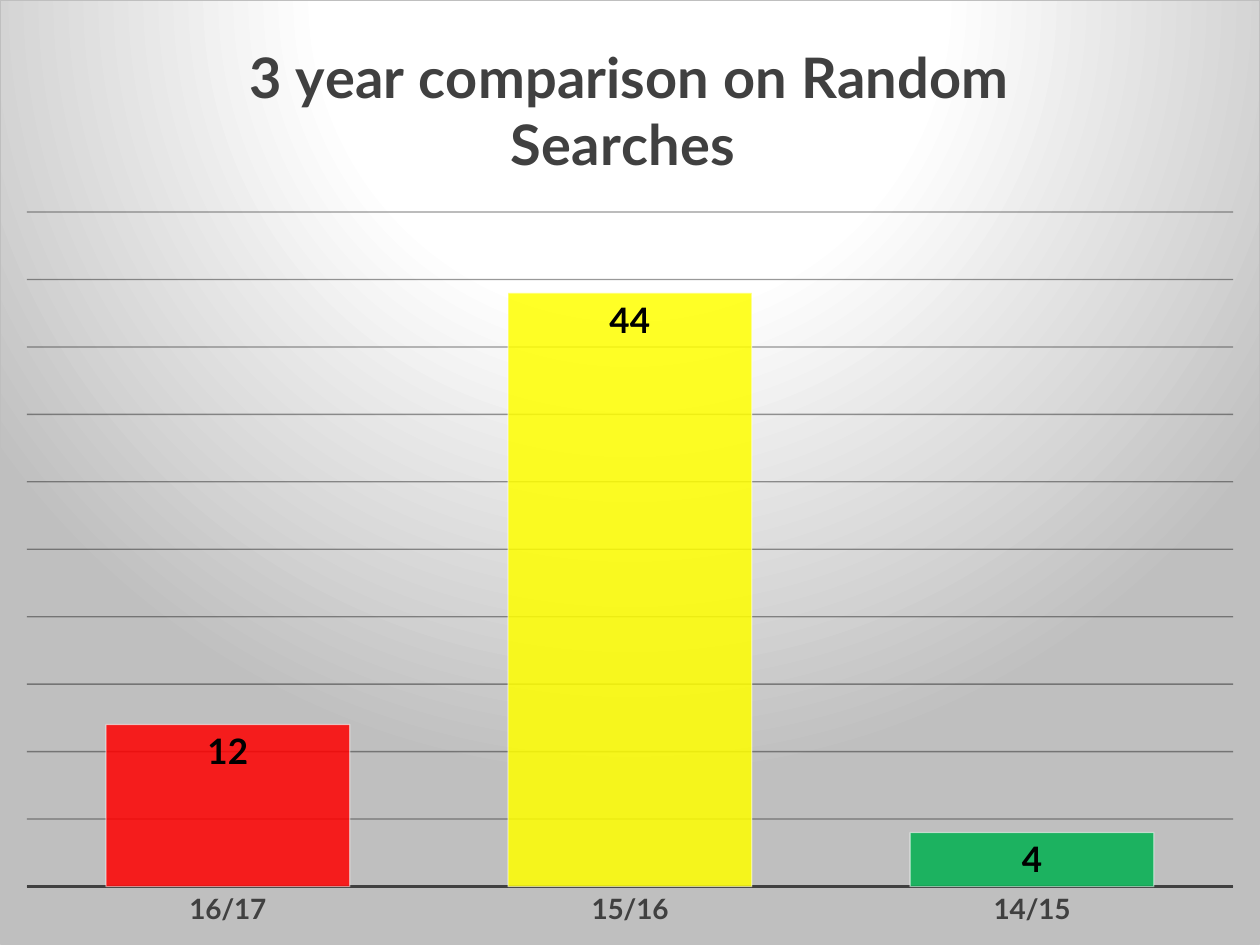
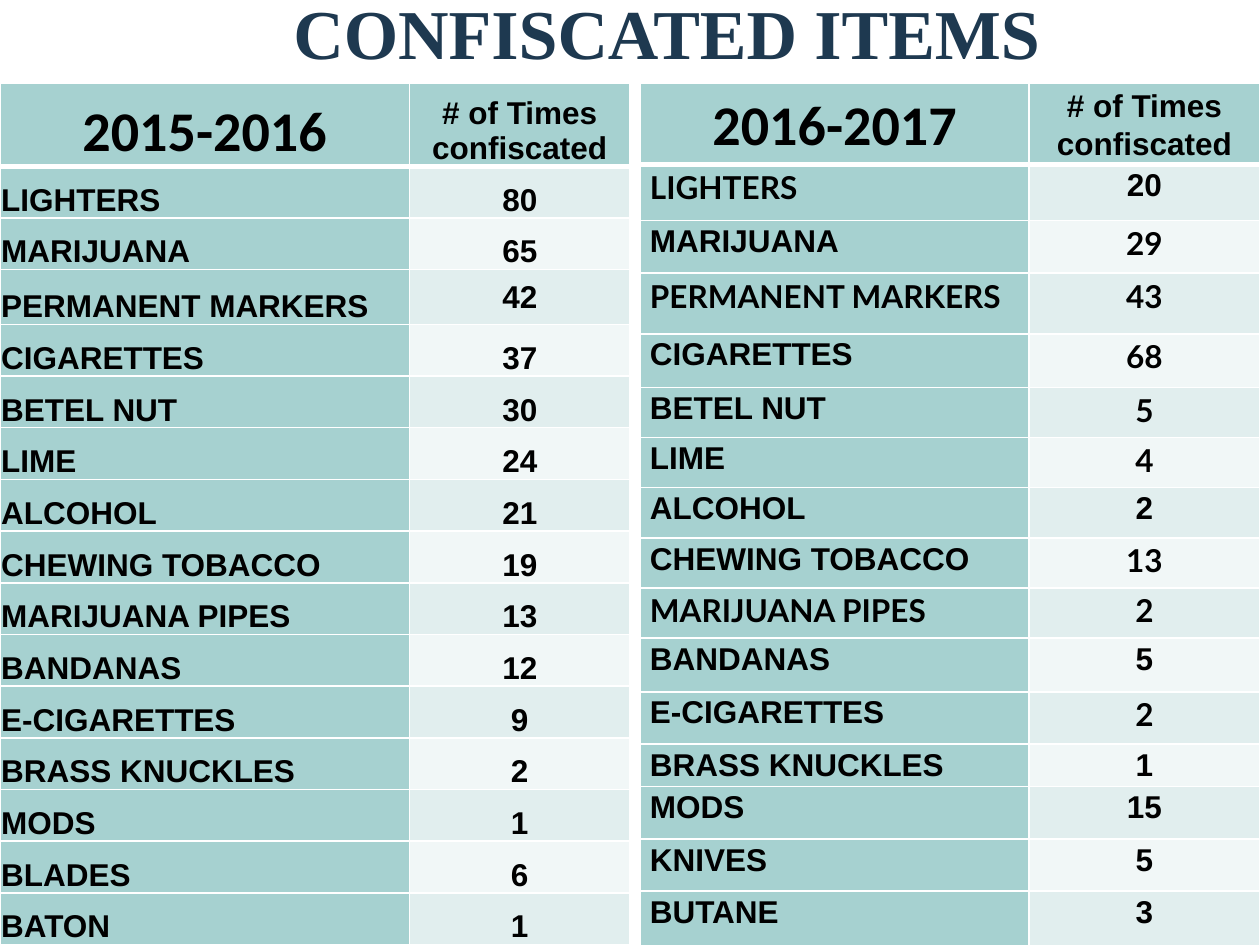
from dataclasses import dataclass

from lxml import etree
from pptx import Presentation
from pptx.chart.data import CategoryChartData
from pptx.dml.color import RGBColor
from pptx.enum.chart import XL_CHART_TYPE, XL_LABEL_POSITION, XL_TICK_LABEL_POSITION, XL_TICK_MARK
from pptx.enum.text import MSO_ANCHOR, PP_ALIGN
from pptx.oxml import parse_xml
from pptx.oxml.ns import nsdecls, qn
from pptx.util import Pt

COLUMNS = XL_CHART_TYPE.COLUMN_CLUSTERED
INSIDE_END = XL_LABEL_POSITION.INSIDE_END
NEXT_TO_AXIS = XL_TICK_LABEL_POSITION.NEXT_TO_AXIS
NO_TICK = XL_TICK_MARK.NONE
LEFT, CENTER = PP_ALIGN.LEFT, PP_ALIGN.CENTER
TOP, MIDDLE, BOTTOM = MSO_ANCHOR.TOP, MSO_ANCHOR.MIDDLE, MSO_ANCHOR.BOTTOM


@dataclass(frozen=True)
class Theme:
    white: str = "FFFFFF"
    black: str = "000000"
    navy: str = "1E3950"
    charcoal: str = "404040"
    grid: str = "0D0D0D"
    silver: str = "BFBFBF"
    teal: str = "A6D1D0"
    bands: tuple = ("E1EEEE", "F1F7F7")
    bars: tuple = ("FF0000", "FFFF00", "00B050")
    sans: str = "Arial"
    chart_sans: str = "Lato"
    header_sans: str = "Calibri"
    serif: str = "Times New Roman"
    page_title: int = 40
    heading: int = 32
    bar_label: int = 20
    body: int = 18
    axis: int = 16


THEME = Theme()
FONTS = {"A": THEME.sans, "L": THEME.chart_sans}
PAGE_BOX = (0, 0, 720, 540)
SEARCHES = {"16/17": 12, "15/16": 44, "14/15": 4}


@dataclass(frozen=True)
class ItemTable:
    year: str
    items: tuple
    widths: tuple
    heights: tuple
    inset: float
    header_anchor: int
    body_anchor: int
    header_spacing: float = 1.0
    body_spacing: float = 1.0
    space_after: int = 0
    middle_counts: tuple = ()


EARLIER_YEAR = ItemTable(
    year="2015-2016",
    items=(
        ("LIGHTERS", 80, "AA"), ("MARIJUANA", 65, "AA"), ("PERMANENT MARKERS", 42, "AA"),
        ("CIGARETTES", 37, "AA"), ("BETEL NUT", 30, "AA"), ("LIME", 24, "AA"),
        ("ALCOHOL", 21, "AA"), ("CHEWING TOBACCO", 19, "AA"), ("MARIJUANA PIPES", 13, "AA"),
        ("BANDANAS", 12, "AA"), ("E-CIGARETTES", 9, "AA"), ("BRASS KNUCKLES", 2, "AA"),
        ("MODS", 1, "AA"), ("BLADES", 6, "AA"), ("BATON", 1, "AA"),
    ),
    widths=(234, 126),
    heights=(47.5, 29.5, 29.5, 31.4) + (29.55,) * 12,
    inset=0.7,
    header_anchor=BOTTOM,
    body_anchor=BOTTOM,
    middle_counts=("PERMANENT MARKERS",),
)
LATER_YEAR = ItemTable(
    year="2016-2017",
    items=(
        ("LIGHTERS", 20, "LA"), ("MARIJUANA", 29, "AL"), ("PERMANENT MARKERS", 43, "LL"),
        ("CIGARETTES", 68, "AL"), ("BETEL NUT", 5, "AL"), ("LIME", 4, "AL"),
        ("ALCOHOL", 2, "AA"), ("CHEWING TOBACCO", 13, "AL"), ("MARIJUANA PIPES", 2, "LL"),
        ("BANDANAS", 5, "AA"), ("E-CIGARETTES", 2, "AL"), ("BRASS KNUCKLES", 1, "AA"),
        ("MODS", 15, "AA"), ("KNIVES", 5, "AA"), ("BUTANE", 3, "AA"),
    ),
    widths=(222, 132),
    heights=(45.5, 32.1, 30, 34.7, 30.7) + (28.65,) * 5 + (30.7, 29.9, 24.3, 29.9, 29.9, 32.4),
    inset=5.4,
    header_anchor=MIDDLE,
    body_anchor=TOP,
    header_spacing=1.06,
    body_spacing=1.07,
    space_after=8,
)


def style_font(font, size, color, name):
    font.size, font.bold, font.name = Pt(size), True, name
    font.color.rgb = RGBColor.from_string(color)


def write(frame, text, size=THEME.body, color=THEME.black, name=THEME.sans,
          align=CENTER, spacing=1.0, after=0):
    para = frame.paragraphs[0]
    para.alignment, para.line_spacing, para.space_after = align, spacing, Pt(after)
    span = para.add_run()
    span.text = text
    style_font(span.font, size, color, name)


def set_alpha(holder, percent):
    for color in holder.iter(qn("a:srgbClr")):
        etree.SubElement(color, qn("a:alpha"), val=str(percent * 1000))


def set_line(line, color, width):
    line.color.rgb = RGBColor.from_string(color)
    line.width = Pt(width)


def gradient(stops, direction):
    marks = "".join(
        f'<a:gs pos="{place * 1000}"><a:srgbClr val="{color}">'
        f'<a:alpha val="{alpha * 1000}"/></a:srgbClr></a:gs>'
        for place, color, alpha in stops)
    return parse_xml(
        f'<a:gradFill {nsdecls("a")}><a:gsLst>{marks}</a:gsLst>{direction}</a:gradFill>')


def set_layout(element, index, box, inner=False):
    for layout in element.findall(qn("c:layout")):
        element.remove(layout)
    target = '<c:layoutTarget val="inner"/>' if inner else ""
    modes = "".join(f'<c:{key}Mode val="edge"/>' for key in "xy")
    sizes = "".join(f'<c:{key} val="{length / whole}"/>'
                    for key, length, whole in zip("xywh", box, PAGE_BOX[2:] * 2))
    element.insert(index, parse_xml(
        f'<c:layout {nsdecls("c")}><c:manualLayout>{target}{modes}{sizes}'
        "</c:manualLayout></c:layout>"))


def set_chart_background(chart):
    area = parse_xml(
        f'<c:spPr {nsdecls("c", "a")}><a:ln w="{Pt(0.75)}"><a:solidFill>'
        f'<a:srgbClr val="{THEME.silver}"/></a:solidFill></a:ln></c:spPr>')
    area.insert(0, gradient(
        ((0, THEME.white, 100), (39, THEME.white, 100), (100, THEME.silver, 100)),
        '<a:path path="circle"><a:fillToRect l="50000" t="-80000" r="50000" b="180000"/>'
        "</a:path>"))
    chart._chartSpace.find(qn("c:chart")).addnext(area)


def style_gridlines(axis):
    axis.has_major_gridlines = True
    line = axis.major_gridlines.format.line
    set_line(line, THEME.grid, 0.75)
    solid = line._ln.find(qn("a:solidFill"))
    line._ln.replace(solid, gradient(
        ((0, THEME.grid, 42), (100, THEME.silver, 36)), '<a:lin ang="5400000" scaled="0"/>'))


def style_axes(chart):
    categories, values = chart.category_axis, chart.value_axis
    categories.major_tick_mark = NO_TICK
    categories.tick_label_position = NEXT_TO_AXIS
    set_line(categories.format.line, THEME.charcoal, 1.5)
    style_font(categories.tick_labels.font, THEME.axis, THEME.charcoal, THEME.chart_sans)
    values.minimum_scale, values.maximum_scale, values.major_unit = 0, 50, 5
    style_gridlines(values)
    values.visible = False


def style_bars(plot):
    plot.gap_width = 65
    plot.vary_by_categories = False
    series = plot.series[0]
    for index, color in enumerate(THEME.bars):
        bar = series.points[index].format
        bar.fill.solid()
        bar.fill.fore_color.rgb = RGBColor.from_string(color)
        set_alpha(bar.fill._xPr, 85)
        set_line(bar.line, THEME.white, 0.75)
        set_alpha(bar.line._ln, 50)
    plot.has_data_labels = True
    labels = plot.data_labels
    labels.show_value, labels.position = True, INSIDE_END
    style_font(labels.font, THEME.bar_label, THEME.black, THEME.chart_sans)


def add_search_chart(page, box):
    data = CategoryChartData()
    data.categories = list(SEARCHES)
    data.add_series("Series 1", list(SEARCHES.values()))
    chart = page.shapes.add_chart(COLUMNS, *map(Pt, box), data).chart
    chart.has_legend = False
    chart.font.name, chart.font.size = THEME.chart_sans, Pt(10)
    chart.has_title = True
    write(chart.chart_title.text_frame, "3 year comparison on Random Searches ",
          size=THEME.heading, color=THEME.charcoal, name=THEME.chart_sans)
    set_layout(chart.chart_title._element, 1, (136.5, 15))
    set_layout(chart._chartSpace.chart.plotArea, 0, (15, 121, 690, 386), inner=True)
    style_axes(chart)
    style_bars(chart.plots[0])
    set_chart_background(chart)


def style_cell(cell, fill, inset, anchor, top, bottom):
    cell.fill.solid()
    cell.fill.fore_color.rgb = RGBColor.from_string(fill)
    cell.margin_left = cell.margin_right = Pt(inset)
    cell.margin_top, cell.margin_bottom = Pt(0.7), 0
    cell.vertical_anchor = anchor
    sides = (("L", 1), ("R", 1), ("T", top), ("B", bottom))
    for index, (side, width) in enumerate(sides):
        cell._tc.tcPr.insert(index, parse_xml(
            f'<a:ln{side} {nsdecls("a")} w="{Pt(width)}"><a:solidFill>'
            f'<a:srgbClr val="{THEME.white}"/></a:solidFill></a:ln{side}>'))


def add_item_table(page, left, top, content):
    box = (left, top, sum(content.widths), sum(content.heights))
    table = page.shapes.add_table(len(content.heights), 2, *map(Pt, box)).table
    for column, width in zip(table.columns, content.widths):
        column.width = Pt(width)
    for row, height in zip(table.rows, content.heights):
        row.height = Pt(height)
    headers = ((content.year, THEME.heading, THEME.header_sans),
               ("# of Times confiscated", THEME.body, THEME.sans))
    for column, (text, size, name) in enumerate(headers):
        cell = table.cell(0, column)
        style_cell(cell, THEME.teal, content.inset, content.header_anchor, 1, 3)
        write(cell.text_frame, text, size=size, name=name, spacing=content.header_spacing)
    for row, (item, count, fonts) in enumerate(content.items, 1):
        fills = (THEME.teal, THEME.bands[(row - 1) % 2])
        count_anchor = MIDDLE if item in content.middle_counts else content.body_anchor
        anchors = (content.body_anchor, count_anchor)
        for column, text in enumerate((item, str(count))):
            cell = table.cell(row, column)
            style_cell(cell, fills[column], content.inset, anchors[column],
                       3 if row == 1 else 1, 1)
            write(cell.text_frame, text, name=FONTS[fonts[column]],
                  align=(LEFT, CENTER)[column], spacing=content.body_spacing,
                  after=content.space_after)


def add_page_title(page, box, text):
    frame = page.shapes.add_textbox(*map(Pt, box)).text_frame
    frame.word_wrap = True
    frame.vertical_anchor = MIDDLE
    write(frame, text, size=THEME.page_title, color=THEME.navy, name=THEME.serif)


def add_items_page(page):
    add_page_title(page, (90, -24, 582, 84), "CONFISCATED ITEMS")
    add_item_table(page, 366, 47.5, LATER_YEAR)
    add_item_table(page, 0, 47.5, EARLIER_YEAR)


def main():
    deck = Presentation()
    deck.slide_width, deck.slide_height = map(Pt, PAGE_BOX[2:])
    blank = deck.slide_layouts[6]
    add_search_chart(deck.slides.add_slide(blank), PAGE_BOX)
    add_items_page(deck.slides.add_slide(blank))
    deck.save("out.pptx")


if __name__ == "__main__":
    main()
